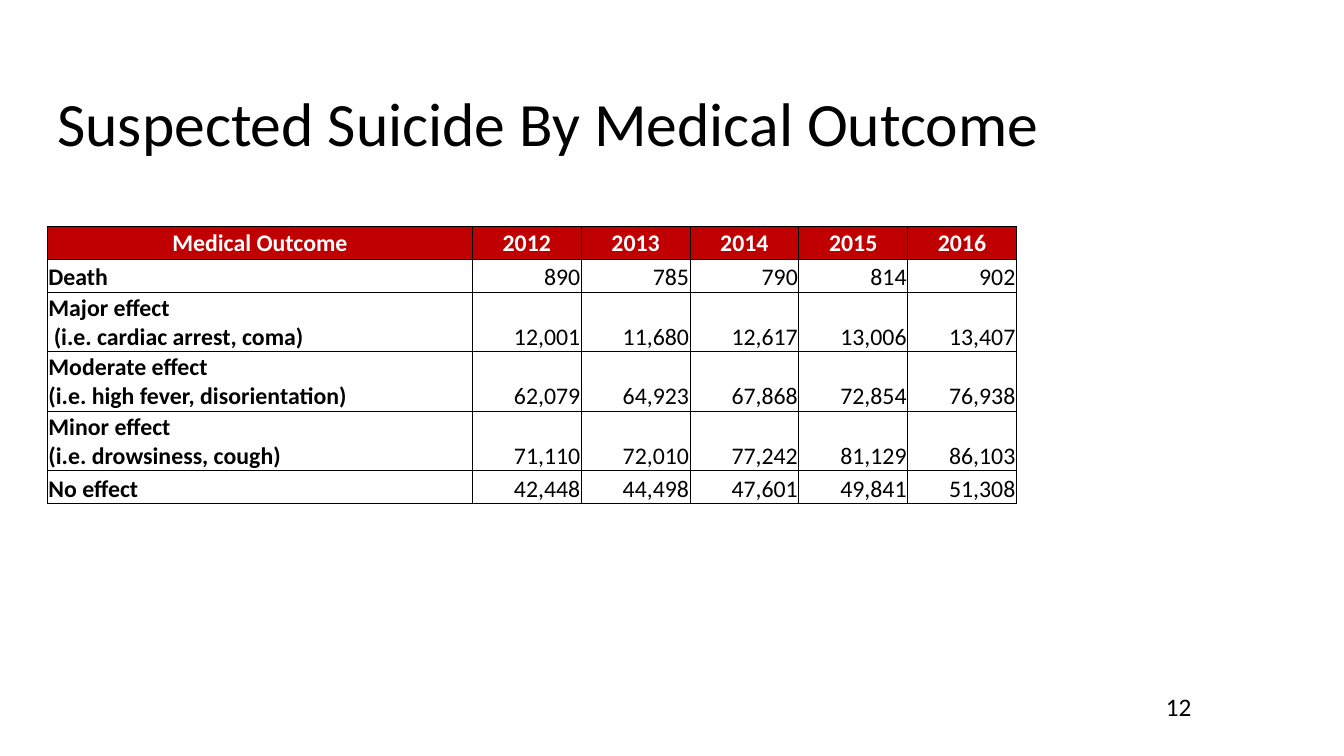
from lxml import etree
from pptx import Presentation
from pptx.dml.color import RGBColor
from pptx.enum import text
from pptx.oxml import ns
from pptx.util import Pt

TITLE = "Suspected Suicide By Medical Outcome"
PAGE = "12"
HEADER = ["Medical Outcome", "2012", "2013", "2014", "2015", "2016"]
OUTCOMES = [
    (["Death"], ["890", "785", "790", "814", "902"]),
    (["Major effect", " (i.e. cardiac arrest, coma)"],
     ["12,001", "11,680", "12,617", "13,006", "13,407"]),
    (["Moderate effect", "(i.e. high fever, disorientation)"],
     ["62,079", "64,923", "67,868", "72,854", "76,938"]),
    (["Minor effect", "(i.e. drowsiness, cough)"],
     ["71,110", "72,010", "77,242", "81,129", "86,103"]),
    (["No effect"], ["42,448", "44,498", "47,601", "49,841", "51,308"]),
]
COLORS = {"text": "000000", "header_text": "FFFFFF", "header": "C00000", "border": "000000"}
FONT = "Calibri"
LABEL_W, YEAR_W, ROW_H = 303.6, 77.7, 23.5
TABLE_LEFT, TABLE_TOP = 33.9, 161.8
ALIGN, ANCHOR = text.PP_ALIGN, text.MSO_ANCHOR


def write(tf, lines, size, color="text", bold=False, align=ALIGN.LEFT):
    for i, line in enumerate(lines):
        p = tf.add_paragraph() if i else tf.paragraphs[0]
        p.alignment = align
        r = p.add_run()
        r.text = line
        r.font.name, r.font.size, r.font.bold = FONT, Pt(size), bold
        r.font.color.rgb = RGBColor.from_string(COLORS[color])


def add_text(s, left, top, width, height, line, size, anchor):
    tf = s.shapes.add_textbox(Pt(left), Pt(top), Pt(width), Pt(height)).text_frame
    tf.word_wrap = True
    tf.vertical_anchor = anchor
    write(tf, [line], size)
    return tf


def add_borders(cell):
    props = cell._tc.get_or_add_tcPr()
    for i, side in enumerate(("lnL", "lnR", "lnT", "lnB")):
        ln = etree.Element(ns.qn("a:" + side), w=str(Pt(0.5)))
        fill = etree.SubElement(ln, ns.qn("a:solidFill"))
        etree.SubElement(fill, ns.qn("a:srgbClr"), val=COLORS["border"])
        props.insert(i, ln)


def fill_cell(cell, lines, is_header, is_label):
    cell.margin_left = cell.margin_right = cell.margin_top = Pt(0.7)
    cell.margin_bottom = Pt(0)
    cell.vertical_anchor = ANCHOR.MIDDLE if is_header else ANCHOR.BOTTOM
    if is_header:
        cell.fill.solid()
        cell.fill.fore_color.rgb = RGBColor.from_string(COLORS["header"])
        align = ALIGN.CENTER
    else:
        cell.fill.background()
        align = ALIGN.LEFT if is_label else ALIGN.RIGHT
    write(cell.text_frame, lines, 17, "header_text" if is_header else "text",
          is_header or is_label, align)
    add_borders(cell)


def add_outcomes(s):
    rows = [[[name] for name in HEADER]]
    rows += [[label] + [[value] for value in values] for label, values in OUTCOMES]
    widths = [LABEL_W] + [YEAR_W] * (len(HEADER) - 1)
    table = s.shapes.add_table(len(rows), len(widths), Pt(TABLE_LEFT), Pt(TABLE_TOP),
                               Pt(sum(widths)), Pt(ROW_H * len(rows))).table
    table.horz_banding = False
    for col, width in zip(table.columns, widths):
        col.width = Pt(width)
    for r, row in enumerate(rows):
        table.rows[r].height = Pt(ROW_H if len(row[0]) == 1 else 42.5)
        for c, lines in enumerate(row):
            fill_cell(table.cell(r, c), lines, r == 0, c == 0)


def main():
    prs = Presentation()
    prs.slide_width, prs.slide_height = Pt(960), Pt(540)
    s = prs.slides.add_slide(prs.slide_layouts[6])
    title = add_text(s, 33.9, 36.7, 887, 106.6, TITLE, 44, ANCHOR.MIDDLE)
    title.paragraphs[0].line_spacing = 0.9
    add_outcomes(s)
    add_text(s, 825.8, 490.3, 134.2, 29, PAGE, 18, ANCHOR.TOP)
    prs.save("out.pptx")


if __name__ == "__main__":
    main()
